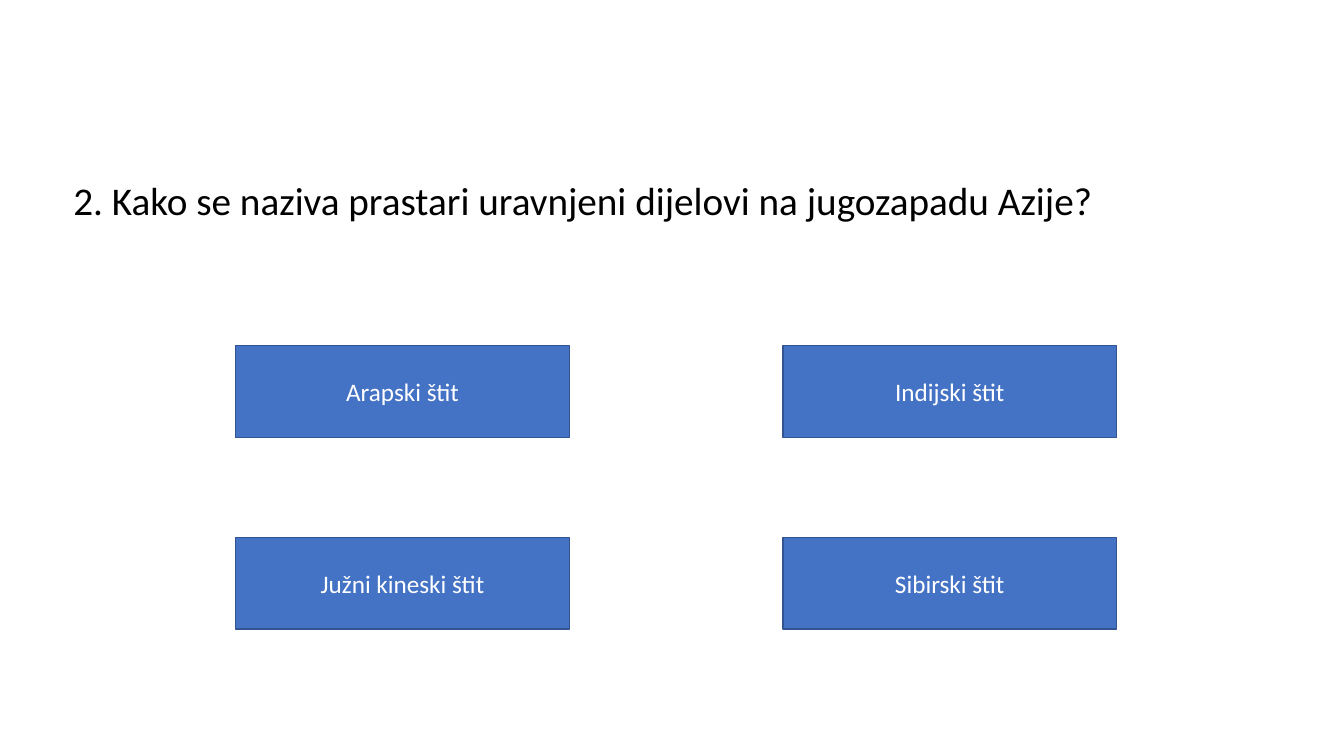
import pptx
import pptx.dml.color
import pptx.enum.shapes
import pptx.enum.text
import pptx.util

Cm = pptx.util.Cm
Pt = pptx.util.Pt
RGBColor = pptx.dml.color.RGBColor

BLUE = RGBColor(0x44, 0x72, 0xC4)
DARK_BLUE = RGBColor(0x32, 0x54, 0x91)
WHITE = RGBColor(0xFF, 0xFF, 0xFF)
BLACK = RGBColor(0x00, 0x00, 0x00)

FONT = "Calibri"
QUESTION = "2. Kako se naziva prastari uravnjeni dijelovi na jugozapadu Azije?"
ANSWERS = [
    ["Arapski štit", "Indijski štit"],
    ["Južni kineski štit", "Sibirski štit"],
]
ANSWER_WIDTH = Cm(8.41)
ANSWER_HEIGHT = Cm(2.31)


def add_span(para, text, size, color):
    span = para.add_run()
    span.text = text
    span.font.name = FONT
    span.font.size = Pt(size)
    span.font.color.rgb = color


def add_question(page, left, top, width, height):
    box = page.shapes.add_textbox(left, top, width, height)
    frame = box.text_frame
    frame.word_wrap = True
    frame.auto_size = pptx.enum.text.MSO_AUTO_SIZE.SHAPE_TO_FIT_TEXT
    add_span(frame.paragraphs[0], QUESTION, 28, BLACK)


def add_answer(page, left, top, text):
    box = page.shapes.add_shape(
        pptx.enum.shapes.MSO_SHAPE.RECTANGLE, left, top, ANSWER_WIDTH, ANSWER_HEIGHT
    )
    box.shadow.inherit = False
    box.fill.solid()
    box.fill.fore_color.rgb = BLUE
    box.line.color.rgb = DARK_BLUE
    box.line.width = Pt(1)
    frame = box.text_frame
    frame.word_wrap = True
    frame.vertical_anchor = pptx.enum.text.MSO_ANCHOR.MIDDLE
    para = frame.paragraphs[0]
    para.alignment = pptx.enum.text.PP_ALIGN.CENTER
    add_span(para, text, 18, WHITE)


def add_answers(page, left, top, width, height):
    column_step = width - ANSWER_WIDTH
    row_step = height - ANSWER_HEIGHT
    for row, texts in enumerate(ANSWERS):
        for column, text in enumerate(texts):
            add_answer(page, left + column * column_step, top + row * row_step, text)


def main():
    deck = pptx.Presentation()
    deck.slide_width = Cm(33.87)
    deck.slide_height = Cm(19.05)
    page = deck.slides.add_slide(deck.slide_layouts[6])
    add_answers(page, Cm(5.94), Cm(8.71), Cm(22.2), Cm(7.14))
    add_question(page, Cm(1.6), Cm(4.32), Cm(30), Cm(1.45))
    deck.save("out.pptx")


if __name__ == "__main__":
    main()
